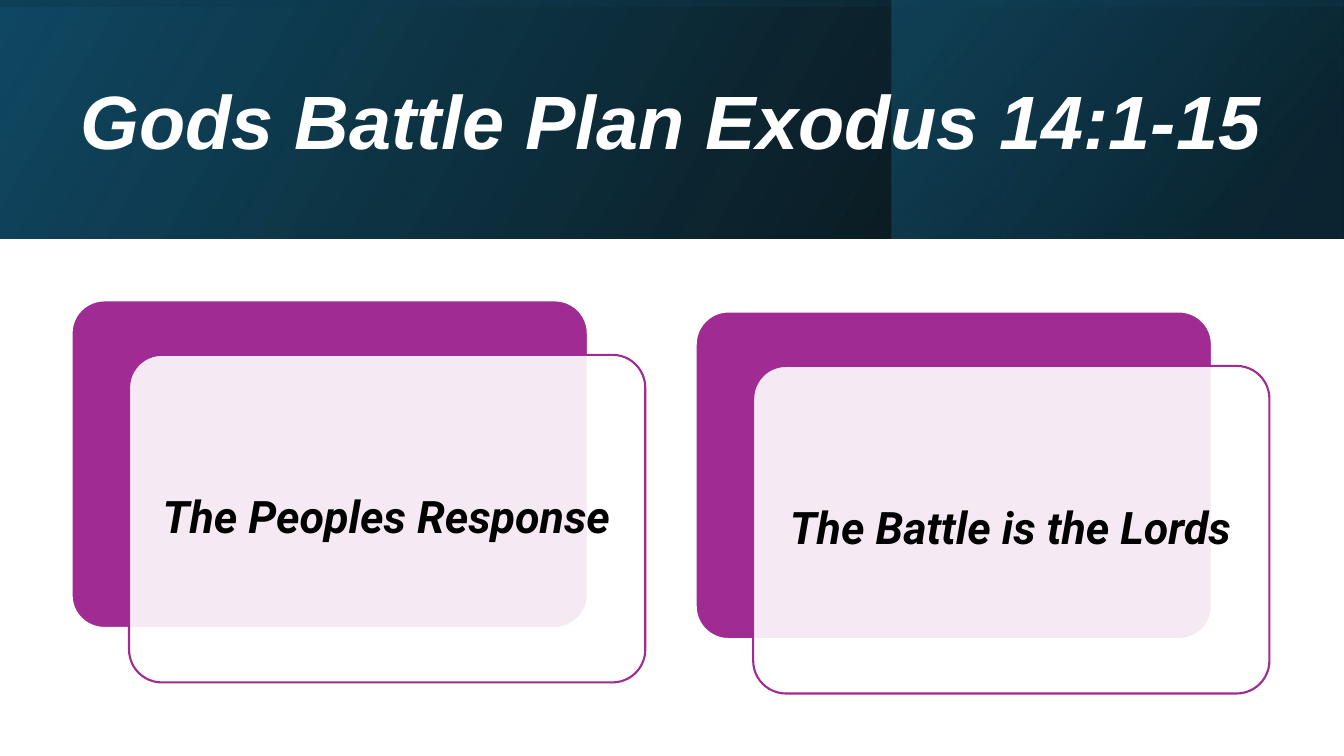
from dataclasses import dataclass

from lxml.etree import SubElement
from pptx import Presentation
from pptx.dml.color import RGBColor
from pptx.enum.shapes import MSO_SHAPE as Kind
from pptx.enum.text import MSO_ANCHOR as Anchor, PP_ALIGN as Align
from pptx.oxml.ns import qn
from pptx.shapes.autoshape import Shape
from pptx.slide import Slide
from pptx.util import Inches, Pt

WHITE, BLACK, PURPLE = "FFFFFF", "000000", "A02B93"
CARD = (5.12, 3.25)


@dataclass
class Stop:
    place: float
    tint: str
    alpha: int


@dataclass
class Band:
    box: tuple[float, float, float, float]
    turn: int
    angle: int
    stops: tuple[Stop, Stop]


@dataclass
class Card:
    left: float
    top: float
    label: str


BANDS = [
    Band((0, 0, 13.33, 2.37), 0, 30, (Stop(0, BLACK, 96), Stop(1, "104862", 100))),
    Band((8.84, 0, 4.48, 2.37), 0, 40, (Stop(0.19, "0B3041", 68), Stop(1, "156082", 48))),
    Band((5.48, -5.48, 2.37, 13.33), 270, 10, (Stop(0.23, "104862", 16), Stop(0.99, BLACK, 45))),
]
CARDS = [
    Card(0.71, 2.98, "The Peoples Response"),
    Card(6.9, 3.09, "The Battle is the Lords"),
]


def color(code: str) -> RGBColor:
    return RGBColor.from_string(code)


def apply(target: object, form: dict) -> None:
    for name, value in form.items():
        setattr(target, name, value)


def fade(shape: Shape, alphas: list[int]) -> None:
    for tint, alpha in zip(shape.element.spPr.iter(qn("a:srgbClr")), alphas):
        if alpha < 100:
            SubElement(tint, qn("a:alpha")).set("val", str(alpha * 1000))


def add_shape(slide: Slide, kind: Kind, box: tuple) -> Shape:
    shape = slide.shapes.add_shape(kind, *map(Inches, box))
    shape.shadow.inherit = False
    return shape


def add_band(slide: Slide, band: Band) -> None:
    shape = add_shape(slide, Kind.RECTANGLE, band.box)
    shape.rotation = band.turn
    shape.element.spPr.find(qn("a:xfrm")).set("flipH", "1")
    shape.line.fill.background()
    shape.fill.gradient()
    shape.fill.gradient_angle = band.angle
    for mark, stop in zip(shape.fill.gradient_stops, band.stops):
        mark.position = stop.place
        mark.color.rgb = color(stop.tint)
    fade(shape, [stop.alpha for stop in band.stops])


def add_plate(slide: Slide, left: float, top: float, fill: str, edge: str, alpha: int) -> None:
    shape = add_shape(slide, Kind.ROUNDED_RECTANGLE, (left, top, *CARD))
    shape.adjustments[0] = 0.1
    shape.fill.solid()
    shape.fill.fore_color.rgb = color(fill)
    fade(shape, [alpha])
    shape.line.color.rgb = color(edge)
    shape.line.width = Pt(1.5)


def add_text(slide: Slide, box: tuple, text: str, face: str, size: int, tint: str,
             align: Align, inset: dict) -> None:
    frame = slide.shapes.add_textbox(*map(Inches, box)).text_frame
    apply(frame, {"word_wrap": True, "vertical_anchor": Anchor.MIDDLE, **inset})
    line = frame.paragraphs[0]
    apply(line, {"alignment": align, "line_spacing": 0.9})
    run = line.add_run()
    run.text = text
    apply(run.font, {"name": face, "size": Pt(size), "bold": True, "italic": True})
    run.font.color.rgb = color(tint)


def add_card(slide: Slide, card: Card) -> None:
    left, top = card.left, card.top
    add_plate(slide, left, top, PURPLE, WHITE, 100)
    add_plate(slide, left + 0.57, top + 0.54, WHITE, PURPLE, 90)
    inset = {f"margin_{side}": Inches(0.13) for side in ("left", "top", "right", "bottom")}
    add_text(slide, (left + 0.66, top + 0.64, 4.93, 3.06), card.label,
             "Roboto", 32, BLACK, Align.CENTER, inset)


def main() -> None:
    deck = Presentation()
    apply(deck, {"slide_width": Inches(13.33), "slide_height": Inches(7.5)})
    slide = deck.slides.add_slide(deck.slide_layouts[6])
    for band in BANDS:
        add_band(slide, band)
    add_text(slide, (0.7, 0.38, 12.08, 1.72), "Gods Battle Plan Exodus 14:1-15",
             "Arial", 54, WHITE, Align.LEFT, {})
    for card in CARDS:
        add_card(slide, card)
    deck.save("out.pptx")


if __name__ == "__main__":
    main()
